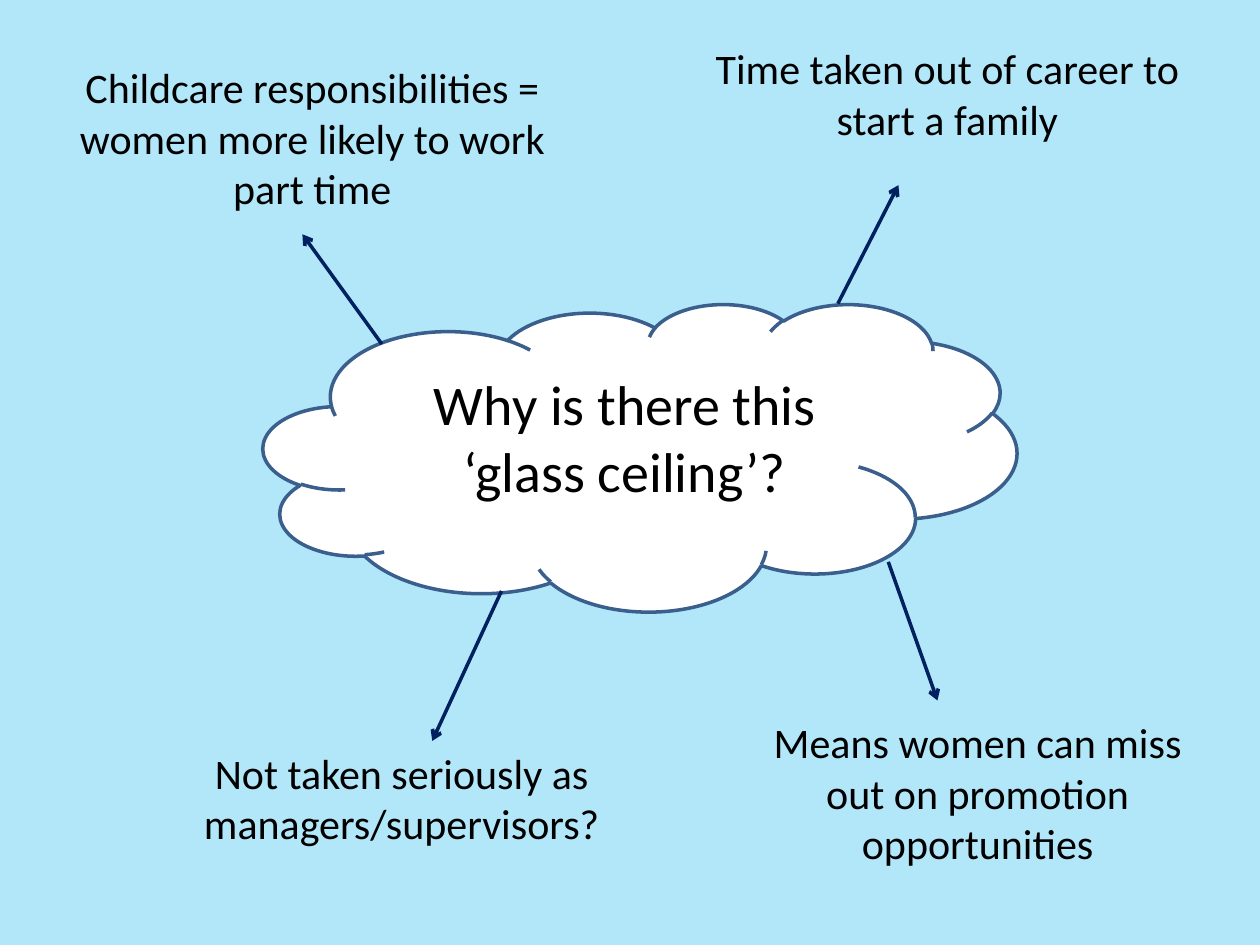
"""Build a mind-map slide on the causes of the glass ceiling."""
from lxml import etree
from pptx import Presentation
from pptx.dml.color import RGBColor
from pptx.enum.shapes import MSO_CONNECTOR, MSO_SHAPE
from pptx.enum.text import MSO_ANCHOR, MSO_AUTO_SIZE, PP_ALIGN
from pptx.oxml.ns import qn
from pptx.util import Pt

CLOUD, LINE = MSO_SHAPE.CLOUD, MSO_CONNECTOR.STRAIGHT
TOP, GROW, MID = MSO_ANCHOR.TOP, MSO_AUTO_SIZE.SHAPE_TO_FIT_TEXT, PP_ALIGN.CENTER

SKY, WHITE, EDGE, NAVY, BLACK = "B2E7FA", "FFFFFF", "3A5F8C", "002060", "000000"
CORE = (150.5, 173.5, 430.5, 175.7)
TITLE = ("Why is there this ‘glass ceiling’?", (218.2, 207.4, 277.9, 85))
WIDE, HIGH = 283.5, {2: 65.5, 3: 94.5}
CAUSES = [
    {"text": "Childcare responsibilities = women more likely to work part time",
     "at": (36.7, 31.7), "rows": 3, "arrow": (218.2, 196.6, 172.8, 133.9)},
    {"text": "Time taken out of career to start a family",
     "at": (399.6, 20.9), "rows": 2, "arrow": (478.8, 173.5, 513.4, 105.8)},
    {"text": "Means women can miss out on promotion opportunities",
     "at": (416.9, 406.1), "rows": 3, "arrow": (507.6, 321.1, 535.7, 400.3)},
    {"text": "Not taken seriously as managers/supervisors?",
     "at": (87.8, 423.4), "rows": 2, "arrow": (286.6, 337.7, 247, 423.4)},
]
FRAME = {"word_wrap": True, "auto_size": GROW, "vertical_anchor": TOP}


def paint(fill, code):
    fill.solid()
    fill.fore_color.rgb = RGBColor.from_string(code)


def stroke(line, code):
    paint(line.fill, code)
    line.width = Pt(2)


def write(shape, text, size):
    frame = shape.text_frame
    for key, value in FRAME.items():
        setattr(frame, key, value)
    para = frame.paragraphs[0]
    para.alignment = MID
    run = para.add_run()
    run.text = text
    for key, value in {"name": "Calibri", "size": Pt(size)}.items():
        setattr(run.font, key, value)
    paint(run.font.fill, BLACK)


def link(shapes, ends):
    arrow = shapes.add_connector(LINE, *map(Pt, ends))
    stroke(arrow.line, NAVY)
    etree.SubElement(arrow.line._get_or_add_ln(), qn("a:tailEnd"), type="arrow")
    etree.SubElement(arrow._element.spPr, qn("a:effectLst"))


def main():
    deck = Presentation()
    deck.slide_width, deck.slide_height = Pt(720), Pt(540)
    slide = deck.slides.add_slide(deck.slide_layouts[5])
    shapes = slide.shapes
    paint(slide.background.fill, SKY)

    cloud = shapes.add_shape(CLOUD, *map(Pt, CORE))
    cloud.shadow.inherit = False
    paint(cloud.fill, WHITE)
    stroke(cloud.line, EDGE)

    title = shapes.title
    text, box = TITLE
    for key, value in zip(("left", "top", "width", "height"), box):
        setattr(title, key, Pt(value))
    write(title, text, 32)
    cloud._element.addnext(title._element)

    for cause in CAUSES:
        link(shapes, cause["arrow"])
        size = (WIDE, HIGH[cause["rows"]])
        note = shapes.add_textbox(*map(Pt, cause["at"] + size))
        write(note, cause["text"], 24)

    deck.save("out.pptx")


if __name__ == "__main__":
    main()
